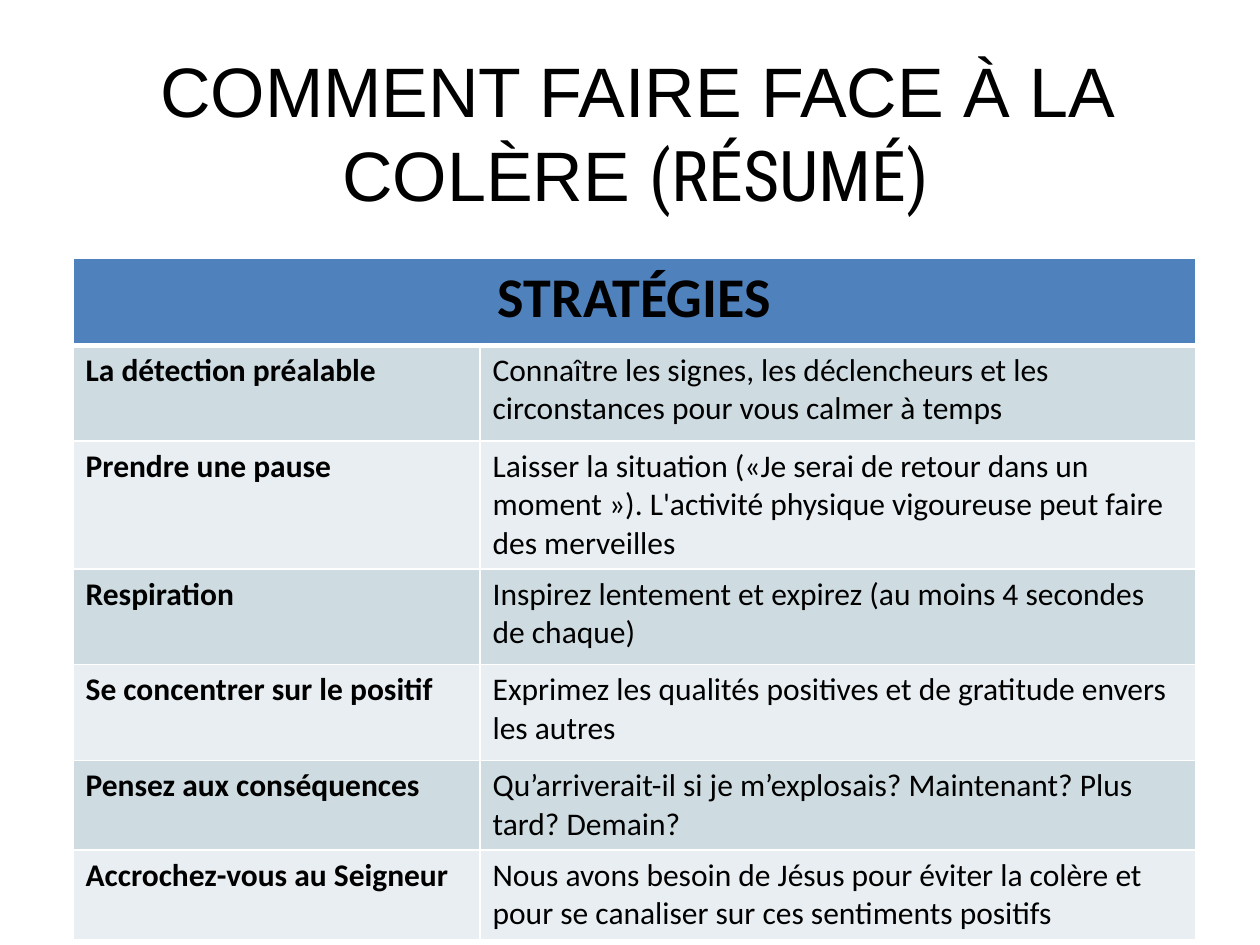
import pptx
import pptx.dml.color
import pptx.enum.text
import pptx.oxml
import pptx.oxml.ns
import pptx.util
from pptx.util import Inches

TITLE = [("COMMENT FAIRE FACE À LA COLÈRE ", "Arial"), ("(RÉSUMÉ)", "Roboto Condensed")]
HEADING = "STRATÉGIES"
STRATEGIES = [
    ("La détection préalable",
     "Connaître les signes, les déclencheurs et les circonstances pour vous calmer à temps"),
    ("Prendre une pause",
     "Laisser la situation («Je serai de retour dans un moment »). "
     "L'activité physique vigoureuse peut faire des merveilles"),
    ("Respiration", "Inspirez lentement et expirez (au moins 4 secondes de chaque)"),
    ("Se concentrer sur le positif",
     "Exprimez les qualités positives et de gratitude envers les autres"),
    ("Pensez aux conséquences",
     "Qu’arriverait-il si je m’explosais? Maintenant? Plus tard? Demain?"),
    ("Accrochez-vous au Seigneur",
     "Nous avons besoin de Jésus pour éviter la colère et pour se canaliser "
     "sur ces sentiments positifs"),
]
COLUMN_WIDTHS = [3.23, 5.68]
ROW_HEIGHTS = [0.69, 0.76, 1.01, 0.76, 0.76, 0.7, 0.7]
THEME = {
    "text": "000000", "border": "FFFFFF", "header": "4F81BD",
    "bands": ["CEDCE1", "E8EEF1"], "table_font": "Calibri",
    "title_size": 40, "heading_size": 32, "body_size": 18,
}
CENTER = pptx.enum.text.PP_ALIGN.CENTER
LEFT = pptx.enum.text.PP_ALIGN.LEFT


def rgb(code):
    return pptx.dml.color.RGBColor.from_string(code)


def add_span(para, text, font, size, bold=False):
    span = para.add_run()
    span.text = text
    span.font.name = font
    span.font.size = pptx.util.Pt(size)
    span.font.bold = bold
    span.font.color.rgb = rgb(THEME["text"])


def set_borders(cell, top=1, bottom=1):
    """Draw the four cell edges, with widths in points."""
    properties = cell._tc.get_or_add_tcPr()
    edges = [("lnL", 1), ("lnR", 1), ("lnT", top), ("lnB", bottom)]
    for position, (edge, width) in enumerate(edges):
        line = pptx.oxml.parse_xml(
            f'<a:{edge} {pptx.oxml.ns.nsdecls("a")} w="{pptx.util.Pt(width)}"><a:solidFill>'
            f'<a:srgbClr val="{THEME["border"]}"/></a:solidFill></a:{edge}>')
        properties.insert(position, line)


def fill_cell(cell, text, color, size, bold, align=LEFT, top=1, bottom=1):
    cell.fill.solid()
    cell.fill.fore_color.rgb = rgb(color)
    set_borders(cell, top, bottom)
    para = cell.text_frame.paragraphs[0]
    para.alignment = align
    add_span(para, text, THEME["table_font"], size, bold)


def add_title(page):
    title = page.shapes.title
    title.left, title.top = Inches(0.42), Inches(0.42)
    title.width, title.height = Inches(9.25), Inches(1.25)
    frame = title.text_frame
    frame.auto_size = pptx.enum.text.MSO_AUTO_SIZE.NONE
    frame.vertical_anchor = pptx.enum.text.MSO_ANCHOR.MIDDLE
    para = frame.paragraphs[0]
    para.alignment = CENTER
    for text, font in TITLE:
        add_span(para, text, font, THEME["title_size"])


def add_strategies(page):
    table = page.shapes.add_table(
        len(ROW_HEIGHTS), len(COLUMN_WIDTHS), Inches(0.58), Inches(2.05),
        Inches(sum(COLUMN_WIDTHS)), Inches(sum(ROW_HEIGHTS))).table
    for column, width in zip(table.columns, COLUMN_WIDTHS):
        column.width = Inches(width)
    for row, height in zip(table.rows, ROW_HEIGHTS):
        row.height = Inches(height)

    heading = table.cell(0, 0)
    heading.merge(table.cell(0, 1))
    fill_cell(heading, HEADING, THEME["header"], THEME["heading_size"], True, CENTER, bottom=3)
    for row, strategy in enumerate(STRATEGIES, start=1):
        band = THEME["bands"][(row - 1) % 2]
        for column, text in enumerate(strategy):
            fill_cell(table.cell(row, column), text, band, THEME["body_size"],
                      bold=column == 0, top=3 if row == 1 else 1)


def main():
    deck = pptx.Presentation()
    deck.slide_width, deck.slide_height = Inches(10), Inches(7.5)
    page = deck.slides.add_slide(deck.slide_layouts[5])
    add_title(page)
    add_strategies(page)
    deck.save("out.pptx")


if __name__ == "__main__":
    main()
